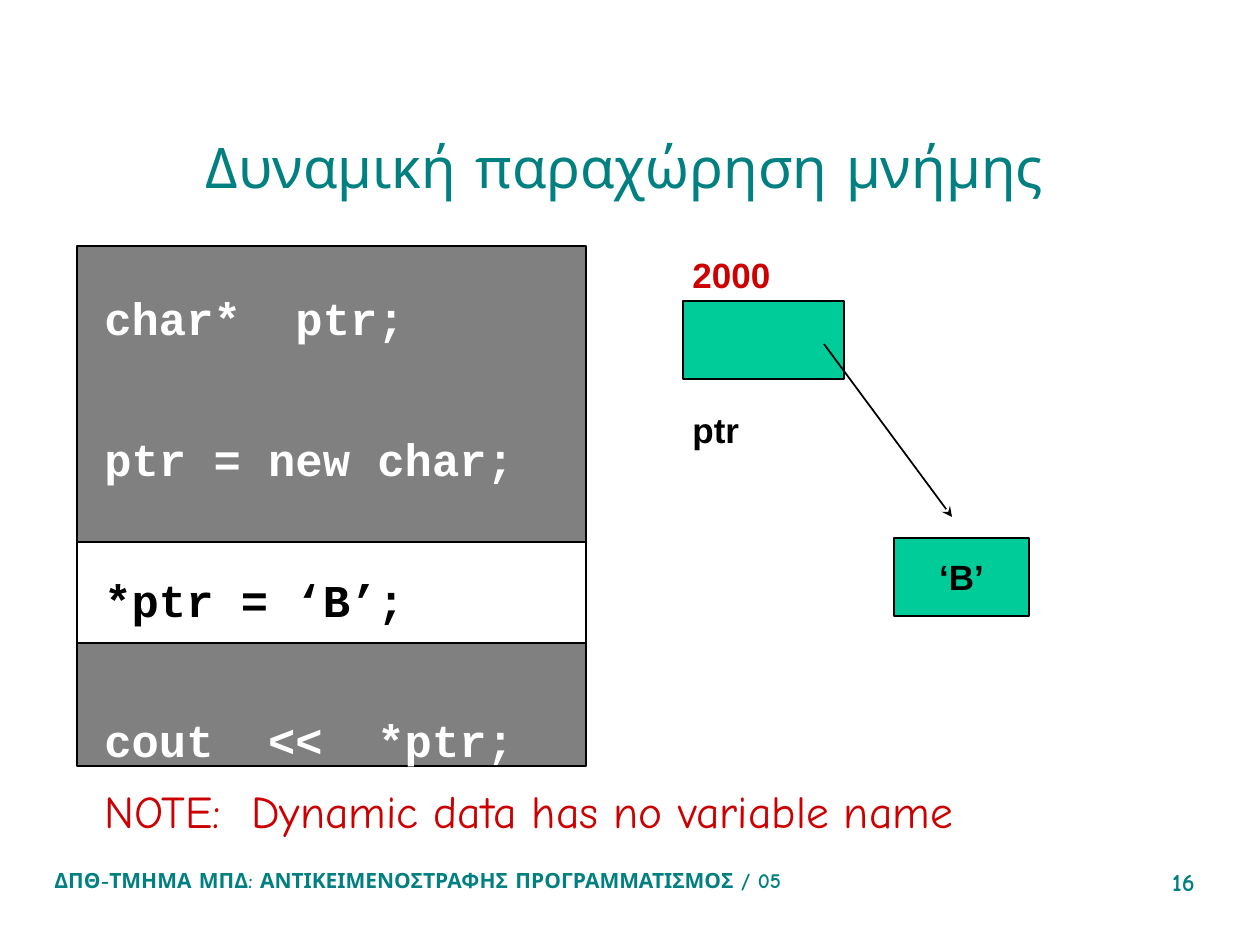
import pptx
import pptx.dml.color
import pptx.enum.shapes
import pptx.enum.text
import pptx.oxml.ns
import pptx.util
from lxml import etree

PP = pptx.enum.text.PP_ALIGN
ANCHOR = pptx.enum.text.MSO_ANCHOR
TEAL, RED, BLACK, WHITE, GREEN, GRAY = "008080", "CC0000", "000000", "FFFFFF", "00CC99", "808080"


def px(length):
    return round(length * 914400 / 126)


def color(value):
    return pptx.dml.color.RGBColor.from_string(value)


def apply(target, values):
    for name, value in values.items():
        setattr(target, name, value)


class SlideBuilder:
    heading = {"name": "Comic Neue", "size": pptx.util.Pt(32), "bold": False}
    code = {"name": "Courier New", "size": pptx.util.Pt(26), "bold": True}
    note = {"name": "Comic Neue", "size": pptx.util.Pt(26), "bold": False}
    label = {"name": "Arial", "size": pptx.util.Pt(20), "bold": True}
    footer = {"name": "Comic Neue", "size": pptx.util.Pt(12), "bold": True}
    number = {"name": "Comic Neue", "size": pptx.util.Pt(14), "bold": True}
    line_width = pptx.util.Pt(1)

    def __init__(self, slide):
        self.slide = slide

    def add_words(self, paragraph, wording, font, ink, **layout):
        run = paragraph.add_run()
        run.text = wording
        apply(run.font, font)
        run.font.color.rgb = color(ink)
        apply(paragraph, layout)

    def frame(self, box, **layout):
        frame = self.slide.shapes.add_textbox(*map(px, box)).text_frame
        apply(frame, {"word_wrap": True, **layout})
        return frame

    def text(self, box, wording, font, ink, align=PP.LEFT, anchor=ANCHOR.TOP):
        frame = self.frame(box, vertical_anchor=anchor)
        self.add_words(frame.paragraphs[0], wording, font, ink, alignment=align)

    def listing(self, box, top_inset, lines):
        frame = self.frame(box, margin_top=px(top_inset))
        for index, (wording, font, ink, gap) in enumerate(lines):
            paragraph = frame.add_paragraph() if index else frame.paragraphs[0]
            self.add_words(paragraph, wording, font, ink, line_spacing=1.1,
                           space_before=pptx.util.Pt(gap))

    def rectangle(self, box, fill, wording=""):
        shape = self.slide.shapes.add_shape(
            pptx.enum.shapes.MSO_SHAPE.RECTANGLE, *map(px, box))
        shape.shadow.inherit = False
        shape.fill.solid()
        shape.fill.fore_color.rgb = color(fill)
        shape.line.color.rgb = color(BLACK)
        shape.line.width = self.line_width
        if wording:
            shape.text_frame.vertical_anchor = ANCHOR.MIDDLE
            self.add_words(shape.text_frame.paragraphs[0], wording, self.label, BLACK,
                           alignment=PP.CENTER)

    def arrow(self, start, end):
        connector = self.slide.shapes.add_connector(
            pptx.enum.shapes.MSO_CONNECTOR.STRAIGHT, *map(px, start + end))
        connector.line.color.rgb = color(BLACK)
        connector.line.width = self.line_width
        qn = pptx.oxml.ns.qn
        properties = connector.element.spPr
        etree.SubElement(properties.find(qn("a:ln")), qn("a:tailEnd"), type="stealth")
        etree.SubElement(properties, qn("a:effectLst"))


def main():
    deck = pptx.Presentation()
    deck.slide_width, deck.slide_height = px(1260), px(945)
    page = SlideBuilder(deck.slides.add_slide(deck.slide_layouts[6]))

    page.text((42, 861, 976, 63), "ΔΠΘ-ΤΜΗΜΑ ΜΠΔ: ΑΝΤΙΚΕΙΜΕΝΟΣΤΡΑΦΗΣ ΠΡΟΓΡΑΜΜΑΤΙΣΜΟΣ / 05",
              page.footer, TEAL)
    page.text((1050, 861, 157, 63), "16", page.number, TEAL, PP.RIGHT)
    page.rectangle((77, 246, 509, 520), GRAY)
    page.rectangle((77, 542, 509, 101), WHITE)
    page.text((84, 48, 1081, 158), "Δυναμική παραχώρηση μνήμης", page.heading, TEAL,
              PP.CENTER, ANCHOR.BOTTOM)

    statement_gap = 46
    page.listing((92, 237, 1084, 586), 48, [
        ("char*  ptr;", page.code, WHITE, 0),
        ("ptr = new char;", page.code, WHITE, statement_gap),
        ("*ptr = ‘B’;", page.code, BLACK, statement_gap),
        ("cout  <<  *ptr;", page.code, WHITE, statement_gap),
        ("NOTE:  Dynamic data has no variable name", page.note, RED, 6),
    ])

    page.rectangle((683, 301, 161, 78), GREEN)
    page.rectangle((894, 538, 135, 78), GREEN, "‘B’")
    page.arrow((824, 344), (952, 517))
    for top, wording, ink in ((247, "2000", RED), (402, "ptr", BLACK)):
        page.text((680, top, 160, 52), wording, page.label, ink)

    deck.save("out.pptx")


if __name__ == "__main__":
    main()
